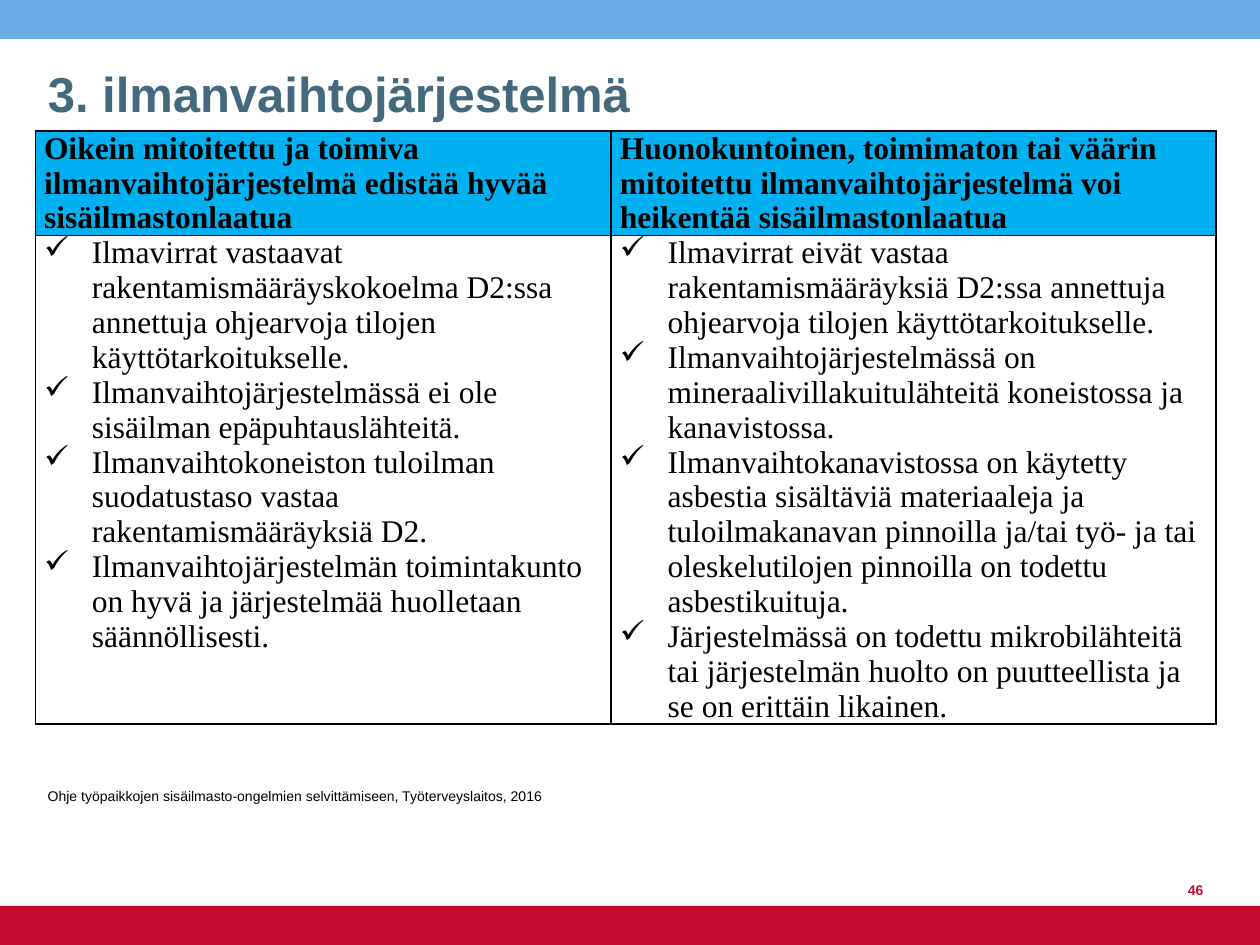
from lxml.etree import SubElement
from pptx import Presentation
from pptx.dml.color import RGBColor
from pptx.enum.shapes import MSO_SHAPE
from pptx.enum.text import MSO_ANCHOR, PP_ALIGN
from pptx.oxml import parse_xml
from pptx.oxml.ns import nsdecls, qn
from pptx.util import Inches, Pt

SKY = RGBColor(0x6A, 0xAD, 0xE4)
CRIMSON = RGBColor(0xC6, 0x0C, 0x30)
SLATE = RGBColor(0x44, 0x69, 0x7D)
CYAN = RGBColor(0x00, 0xB0, 0xF0)
WHITE = RGBColor(0xFF, 0xFF, 0xFF)
BLACK = RGBColor(0x00, 0x00, 0x00)

COLUMN_WIDTHS = (4.57, 4.8)
HEADER_HEIGHT, BODY_HEIGHT = 0.82, 3.85

COMPARISON = [
    ("Oikein mitoitettu ja toimiva ilmanvaihtojärjestelmä edistää hyvää sisäilmastonlaatua", [
        "Ilmavirrat vastaavat rakentamismääräyskokoelma D2:ssa annettuja ohjearvoja tilojen käyttötarkoitukselle.",
        "Ilmanvaihtojärjestelmässä ei ole sisäilman epäpuhtauslähteitä.",
        "Ilmanvaihtokoneiston tuloilman suodatustaso vastaa rakentamismääräyksiä D2.",
        "Ilmanvaihtojärjestelmän toimintakunto on hyvä ja järjestelmää huolletaan säännöllisesti.",
    ]),
    ("Huonokuntoinen, toimimaton tai väärin mitoitettu ilmanvaihtojärjestelmä voi heikentää sisäilmastonlaatua", [
        "Ilmavirrat eivät vastaa rakentamismääräyksiä D2:ssa annettuja ohjearvoja tilojen käyttötarkoitukselle.",
        "Ilmanvaihtojärjestelmässä on mineraalivillakuitulähteitä koneistossa ja kanavistossa.",
        "Ilmanvaihtokanavistossa on käytetty asbestia sisältäviä materiaaleja ja tuloilmakanavan pinnoilla "
        "ja/tai työ- ja tai oleskelutilojen pinnoilla on todettu asbestikuituja.",
        "Järjestelmässä on todettu mikrobilähteitä tai järjestelmän huolto on puutteellista ja se on erittäin likainen.",
    ]),
]


def add_run(paragraph, text, size, color, bold=False, font="Arial"):
    run = paragraph.add_run()
    run.text = text
    run.font.name = font
    run.font.size = Pt(size)
    run.font.bold = bold
    run.font.color.rgb = color


def add_band(slide, left, top, width, height, color):
    band = slide.shapes.add_shape(MSO_SHAPE.RECTANGLE, left, top, width, height)
    band.shadow.inherit = False
    band.fill.solid()
    band.fill.fore_color.rgb = color
    band.line.fill.background()


def add_title(slide, left, top, width, height):
    title = slide.shapes.title
    title.left, title.top, title.width, title.height = left, top, width, height
    frame = title.text_frame
    frame.vertical_anchor = MSO_ANCHOR.BOTTOM
    frame.paragraphs[0].alignment = PP_ALIGN.LEFT
    add_run(frame.paragraphs[0], "3. ilmanvaihtojärjestelmä", 28, SLATE, bold=True)


def add_label(slide, left, top, width, height, text, color, bold, alignment, anchor):
    frame = slide.shapes.add_textbox(left, top, width, height).text_frame
    frame.word_wrap = True
    frame.vertical_anchor = anchor
    frame.paragraphs[0].alignment = alignment
    add_run(frame.paragraphs[0], text, 8, color, bold)


def format_cell(cell, color):
    cell.margin_left = cell.margin_right = Inches(0.07)
    cell.margin_top = cell.margin_bottom = 0
    cell.fill.solid()
    cell.fill.fore_color.rgb = color
    properties = cell._tc.get_or_add_tcPr()
    for position, side in enumerate(("lnL", "lnR", "lnT", "lnB")):
        properties.insert(position, parse_xml(
            f'<a:{side} {nsdecls("a")} w="{Pt(1)}"><a:solidFill>'
            f'<a:srgbClr val="{BLACK}"/></a:solidFill></a:{side}>'))


def add_check(paragraph):
    properties = paragraph._p.get_or_add_pPr()
    properties.set("marL", str(Inches(0.38)))
    properties.set("indent", str(-Inches(0.38)))
    SubElement(properties, qn("a:buChar"), char="✓")
    tabs = SubElement(properties, qn("a:tabLst"))
    SubElement(tabs, qn("a:tab"), pos=str(Inches(0.25)), algn="l")


def add_comparison(slide, left, top, width, height):
    table = slide.shapes.add_table(2, len(COMPARISON), left, top, width, height).table
    table.first_row = table.horz_banding = False
    table.rows[0].height = Inches(HEADER_HEIGHT)
    table.rows[1].height = Inches(BODY_HEIGHT)
    for index, (heading, points) in enumerate(COMPARISON):
        table.columns[index].width = Inches(COLUMN_WIDTHS[index])
        header, body = table.cell(0, index), table.cell(1, index)
        format_cell(header, CYAN)
        format_cell(body, WHITE)
        add_run(header.text_frame.paragraphs[0], heading, 18, BLACK, True, "Times New Roman")
        for number, point in enumerate(points):
            frame = body.text_frame
            paragraph = frame.add_paragraph() if number else frame.paragraphs[0]
            add_check(paragraph)
            add_run(paragraph, point, 18, BLACK, font="Times New Roman")


def main():
    presentation = Presentation()
    presentation.slide_width, presentation.slide_height = Inches(10), Inches(7.5)
    slide = presentation.slides.add_slide(presentation.slide_layouts[5])
    band_height = Inches(0.31)
    add_band(slide, 0, 0, presentation.slide_width, band_height, SKY)
    add_band(slide, 0, presentation.slide_height - band_height,
             presentation.slide_width, band_height, CRIMSON)
    add_title(slide, Inches(0.28), Inches(0.29), Inches(6.38), Inches(0.73))
    add_comparison(slide, Inches(0.28), Inches(1.04), Inches(sum(COLUMN_WIDTHS)),
                   Inches(HEADER_HEIGHT + BODY_HEIGHT))
    add_label(slide, Inches(9.1), Inches(6.78), Inches(0.55), Inches(0.4), "46",
              CRIMSON, True, PP_ALIGN.RIGHT, MSO_ANCHOR.BOTTOM)
    add_label(slide, Inches(0.28), Inches(6.12), Inches(7.01), Inches(0.39),
              "Ohje työpaikkojen sisäilmasto-ongelmien selvittämiseen, Työterveyslaitos, 2016",
              BLACK, False, PP_ALIGN.LEFT, MSO_ANCHOR.MIDDLE)
    presentation.save("out.pptx")


if __name__ == "__main__":
    main()
